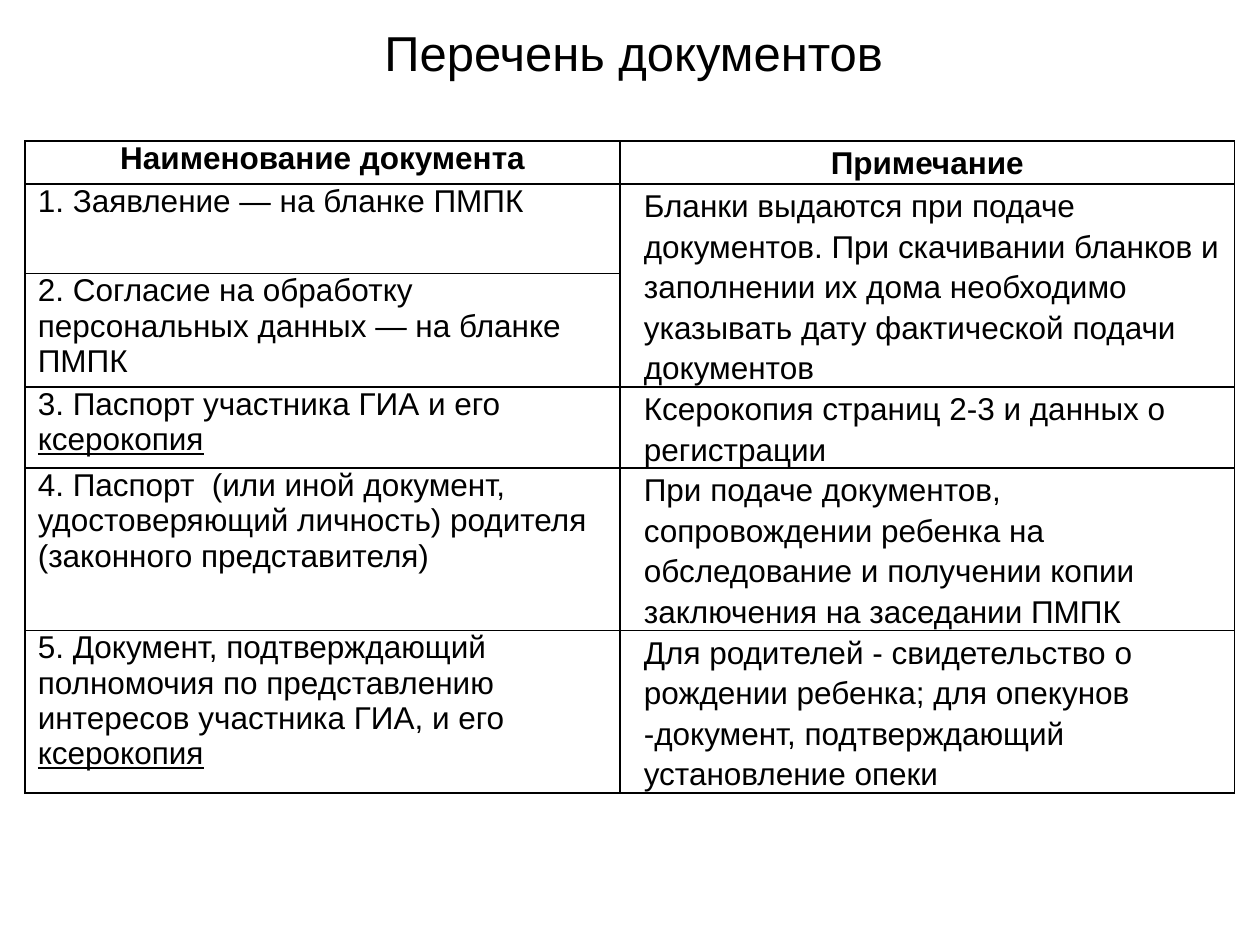
from lxml import etree
from pptx import Presentation
from pptx import util as u
from pptx.dml.color import RGBColor
from pptx.enum import text
from pptx.oxml import ns

COLORS = {"ink": "000000", "paper": "FFFFFF"}
FONT = "Arial"
COLS = [4.72, 4.88]
ROWS = [0.34, 0.71, 0.9, 0.64, 1.29, 1.29]
INDENTS = [0.1, 0.19]
SPACING = [None, 1.15]

HEADERS = ["Наименование документа", "Примечание"]
# Each row: document, underlined ending, note (None continues the note above)
DOCUMENTS = [
    ("1. Заявление — на бланке ПМПК", "",
     "Бланки выдаются при подаче документов. При скачивании бланков "
     "и заполнении их дома необходимо указывать дату фактической подачи документов"),
    ("2. Согласие на обработку персональных данных — на бланке ПМПК", "", None),
    ("3. Паспорт участника ГИА и его ", "ксерокопия",
     "Ксерокопия страниц 2-3 и данных о регистрации"),
    ("4. Паспорт  (или иной документ, удостоверяющий личность) родителя "
     "(законного представителя)", "",
     "При подаче документов, сопровождении ребенка на обследование "
     "и получении копии заключения на заседании ПМПК"),
    ("5. Документ, подтверждающий полномочия по представлению "
     "интересов участника ГИА, и его ", "ксерокопия",
     "Для родителей - свидетельство о рождении ребенка; для опекунов "
     "-документ, подтверждающий установление опеки"),
]


def add_text(p, content, size=18, bold=False, underline=False):
    r = p.add_run()
    r.text = content
    r.font.name = FONT
    r.font.size = u.Pt(size)
    r.font.bold = bold
    r.font.underline = underline
    r.font.color.rgb = RGBColor.from_string(COLORS["ink"])


def add_title(slide, content):
    sp = slide.shapes.title
    sp.left, sp.top = u.Inches(1.41), u.Inches(0.13)
    sp.width, sp.height = u.Inches(7.24), u.Inches(0.57)
    sp.text_frame.vertical_anchor = text.MSO_ANCHOR.TOP
    p = sp.text_frame.paragraphs[0]
    p.alignment = text.PP_ALIGN.CENTER
    add_text(p, content, size=28)


def set_borders(cell):
    tc_pr = cell._tc.get_or_add_tcPr()
    for i, side in enumerate(("lnL", "lnR", "lnT", "lnB")):
        ln = etree.Element(ns.qn(f"a:{side}"), w=str(u.Pt(1)))
        fill = etree.SubElement(ln, ns.qn("a:solidFill"))
        etree.SubElement(fill, ns.qn("a:srgbClr"), val=COLORS["ink"])
        tc_pr.insert(i, ln)


def format_cell(cell):
    cell.margin_left = cell.margin_right = cell.margin_top = cell.margin_bottom = 0
    cell.fill.solid()
    cell.fill.fore_color.rgb = RGBColor.from_string(COLORS["paper"])
    set_borders(cell)


def fill_cell(cell, col, content, ending="", header=False):
    p = cell.text_frame.paragraphs[0]
    p.space_before = p.space_after = u.Pt(7.5)
    p.line_spacing = SPACING[col]
    if header:
        p.alignment = text.PP_ALIGN.CENTER
    else:
        p._p.get_or_add_pPr().set("marL", str(u.Inches(INDENTS[col])))
    add_text(p, content, bold=header)
    if ending:
        add_text(p, ending, underline=True)


def add_documents_table(slide):
    table = slide.shapes.add_table(
        len(ROWS), len(COLS), u.Inches(0.2), u.Inches(1.12),
        u.Inches(sum(COLS)), u.Inches(sum(ROWS))).table
    table.first_row = table.horz_banding = False
    for column, width in zip(table.columns, COLS):
        column.width = u.Inches(width)
    for row, height in zip(table.rows, ROWS):
        row.height = u.Inches(height)
    for cell in table.iter_cells():
        format_cell(cell)

    # Header row
    for col, header in enumerate(HEADERS):
        fill_cell(table.cell(0, col), col, header, header=True)

    # Documents and their notes
    for row, (document, ending, note) in enumerate(DOCUMENTS, start=1):
        fill_cell(table.cell(row, 0), 0, document, ending)
        if note is None:
            table.cell(row - 1, 1).merge(table.cell(row, 1))
        else:
            fill_cell(table.cell(row, 1), 1, note)


def main():
    prs = Presentation()
    prs.slide_width, prs.slide_height = u.Inches(10), u.Inches(7.5)
    slide = prs.slides.add_slide(prs.slide_layouts[5])
    add_title(slide, "Перечень документов")
    add_documents_table(slide)
    prs.save("out.pptx")


if __name__ == "__main__":
    main()
